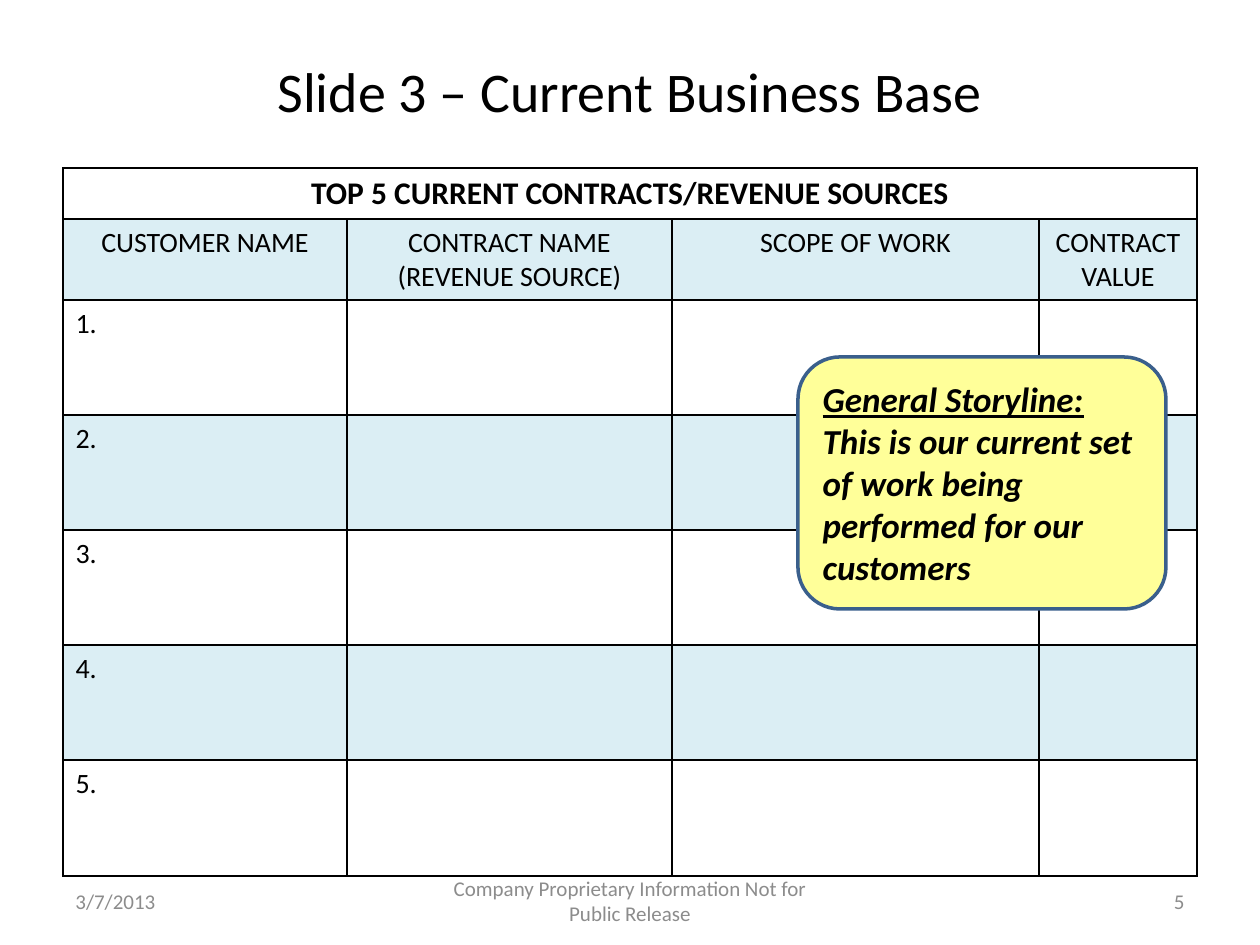
"""Build the current business base slide."""
from dataclasses import dataclass

from lxml import etree
from pptx import Presentation
from pptx.dml.color import RGBColor
from pptx.enum.shapes import MSO_SHAPE
from pptx.enum.text import MSO_ANCHOR, PP_ALIGN
from pptx.oxml.ns import qn
from pptx.util import Emu, Pt

LEFT, MID, RIGHT = PP_ALIGN.LEFT, PP_ALIGN.CENTER, PP_ALIGN.RIGHT
MIDDLE = MSO_ANCHOR.MIDDLE
ROUND = MSO_SHAPE.ROUNDED_RECTANGLE
BLACK = RGBColor(0, 0, 0)
GRAY = RGBColor(0x8C, 0x8C, 0x8C)
PALE = RGBColor(0xDB, 0xEE, 0xF4)
YELLOW = RGBColor(0xFF, 0xFF, 0x99)
BLUE = RGBColor(0x3A, 0x5F, 0x8C)
FONT = "Calibri"
SCALE = 914400 / 126

COLS = [284, 325, 367, 158]
ROWS = [51, 81] + [115] * 4 + [116]
HEADS = ["CUSTOMER NAME", "CONTRACT NAME\n(REVENUE SOURCE)",
         "SCOPE OF WORK", "CONTRACT VALUE"]


@dataclass
class Label:
    text: str
    box: tuple[int, int, int, int]
    size: int
    color: RGBColor
    align: PP_ALIGN


LABELS = [
    Label("Slide 3 – Current Business Base", (63, 41, 1134, 98), 32, BLACK, MID),
    Label("5", (903, 876, 294, 50), 12, GRAY, RIGHT),
    Label("3/7/2013", (63, 876, 294, 50), 12, GRAY, LEFT),
    Label("Company Proprietary Information Not for Public Release",
          (430, 876, 400, 50), 12, GRAY, MID),
]


def px(num: int) -> Emu:
    """Turn px into EMU."""
    return Emu(round(num * SCALE))


def write(frame, text: str, size: int, color: RGBColor = BLACK,
          align: PP_ALIGN = LEFT, bold: bool = False) -> None:
    """Set the text of a frame and format its runs."""
    frame.text = text
    for para in frame.paragraphs:
        para.alignment = align
        for run in para.runs:
            font = run.font
            font.name, font.size, font.bold = FONT, Pt(size), bold
            font.color.rgb = color


def draw_label(slide, label: Label) -> None:
    """Draw a text box."""
    frame = slide.shapes.add_textbox(*map(px, label.box)).text_frame
    frame.word_wrap = True
    frame.vertical_anchor = MIDDLE
    write(frame, label.text, label.size, label.color, label.align)


def edge(cell) -> None:
    """Give a cell black borders on all sides."""
    props = cell._tc.get_or_add_tcPr()
    for i, side in enumerate(("lnL", "lnR", "lnT", "lnB")):
        line = etree.Element(qn(f"a:{side}"), w=str(Pt(1)))
        fill = etree.SubElement(line, qn("a:solidFill"))
        etree.SubElement(fill, qn("a:srgbClr"), val=str(BLACK))
        props.insert(i, line)


def draw_table(slide) -> None:
    """Draw the table of contracts."""
    table = slide.shapes.add_table(
        len(ROWS), len(COLS), px(63), px(168), px(sum(COLS)), px(sum(ROWS))).table
    table.first_row = table.horz_banding = False
    for col, width in zip(table.columns, COLS):
        col.width = px(width)
    for i, (row, height) in enumerate(zip(table.rows, ROWS)):
        row.height = px(height)
        for cell in row.cells:
            if i % 2:
                cell.fill.solid()
                cell.fill.fore_color.rgb = PALE
            else:
                cell.fill.background()
            edge(cell)
    top = table.cell(0, 0)
    top.merge(table.cell(0, len(COLS) - 1))
    write(top.text_frame, "TOP 5 CURRENT CONTRACTS/REVENUE SOURCES", 18,
          align=MID, bold=True)
    for j, head in enumerate(HEADS):
        write(table.cell(1, j).text_frame, head, 16, align=MID)
    for i in range(2, len(ROWS)):
        write(table.cell(i, 0).text_frame, f"{i - 1}.", 16)


def draw_note(slide) -> None:
    """Draw the storyline note."""
    note = slide.shapes.add_shape(ROUND, *map(px, (798, 357, 368, 252)))
    note.shadow.inherit = False
    note.fill.solid()
    note.fill.fore_color.rgb = YELLOW
    note.line.color.rgb = BLUE
    note.line.width = Pt(2)
    frame = note.text_frame
    frame.word_wrap = True
    frame.vertical_anchor = MIDDLE
    write(frame, "General Storyline:\nThis is our current set of work being "
          "performed for our customers", 20, bold=True)
    for i, para in enumerate(frame.paragraphs):
        font = para.runs[0].font
        font.italic = True
        font.underline = i == 0


def main() -> None:
    """Build and save the slide."""
    deck = Presentation()
    deck.slide_width, deck.slide_height = px(1260), px(945)
    slide = deck.slides.add_slide(deck.slide_layouts[6])
    draw_table(slide)
    for label in LABELS:
        draw_label(slide, label)
    draw_note(slide)
    deck.save("out.pptx")


if __name__ == "__main__":
    main()
